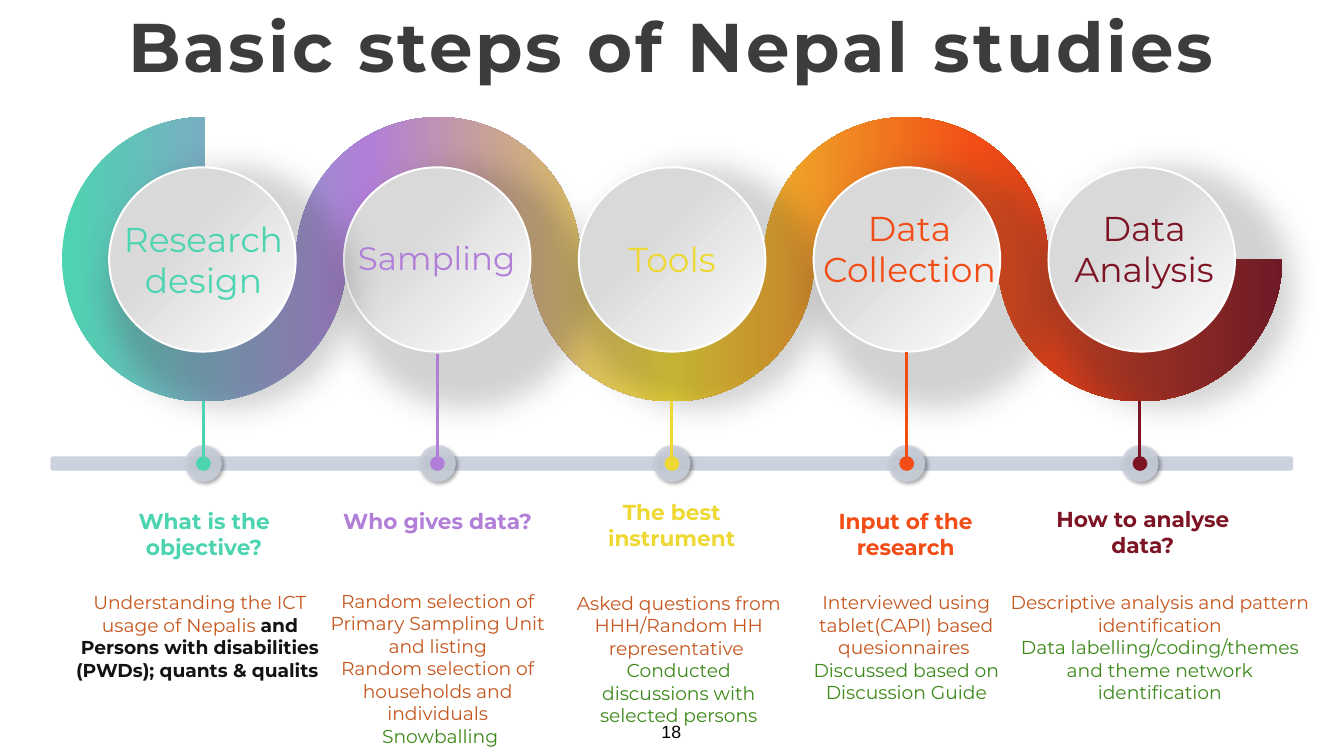
from itertools import pairwise

from lxml.etree import SubElement
from pptx import Presentation
from pptx.dml.color import RGBColor
from pptx.enum.shapes import MSO_CONNECTOR as Connector, MSO_SHAPE as Shape
from pptx.enum.text import MSO_ANCHOR as Anchor, MSO_AUTO_SIZE as AutoSize, PP_ALIGN as Align
from pptx.oxml.ns import qn
from pptx.util import Pt

COLORS = {
    "teal": "4CD4B0", "violet": "B17ED8", "yellow": "EDD834", "orange": "F24D16",
    "wine": "7D1424", "rust": "C5571F", "green": "3D891A", "ink": "141313",
    "title": "3C3C3C", "bar": "CBD1DD", "disc": "DAD9DA", "white": "FFFFFF",
    "disc_shadow": "383535", "black": "000000",
}
RIBBON_STOPS = [(0, "teal"), (25, "violet"), (50, "yellow"), (75, "orange"), (100, "wine")]
DISC_STOPS = [(36, "disc"), (100, "white")]
DISC_SHADOW = {"color": "disc_shadow", "alpha": 21, "blur": 30, "distance": 0, "scale": 130}
NODE_SHADOW = {"color": "black", "alpha": 40, "blur": 4, "distance": 3, "scale": 100}

RIBBON_X, RIBBON_Y = 207.4, 263.4
RIBBON_OUTER, RIBBON_INNER = 144.4, 93.2
RIBBON_PITCH = RIBBON_OUTER + RIBBON_INNER
RIBBON_BOTTOM = RIBBON_Y + RIBBON_OUTER
CURVE = 0.5523  # control point ratio of a quarter circle
NODE_Y, NODE_SIZE = 470.9, 37.5

# Each step: colour, stem, then (box, content) for label, question and details
STEPS = [
    {"color": "teal", "center": 206.6, "stem": RIBBON_BOTTOM, "label_size": 35,
     "label": ((89, 216, 235.4, 95), "Research design"),
     "question": ((72, 511.3, 270.7, 63), "What is the objective?"),
     "details": ((56.9, 595.5, 292.3, 102), [
         [("Understanding the ICT usage of Nepalis ", "rust", False),
          ("and Persons with disabilities", "ink", True)],
         [("(PWDs); quants & qualits ", "ink", True)]])},
    {"color": "violet", "center": 444.2, "stem": 359.3, "label_size": 33,
     "label": ((348.5, 236.9, 190, 50.4), "Sampling"),
     "question": ((334, 511.3, 221, 36.7), "Who gives data?"),
     "details": ((325.4, 594.2, 238.3, 171.4), [
         [("Random selection of Primary Sampling Unit and listing", "rust", False)],
         [("Random selection of households and individuals", "rust", False)],
         [(" ", "rust", False), ("Snowballing", "green", False)]])},
    {"color": "yellow", "center": 682.4, "stem": RIBBON_BOTTOM, "label_size": 35,
     "label": ((597.6, 236.9, 170, 52.6), "Tools"),
     "question": ((571.7, 501.8, 221, 63), "The best instrument"),
     "details": ((571.7, 596.2, 235.4, 148.3), [
         [("Asked questions from HHH/Random HH representative ", "rust", False)],
         [("Conducted discussions with selected persons", "green", False)]])},
    {"color": "orange", "center": 920.9, "stem": 357.1, "label_size": 35,
     "label": ((816.9, 205.2, 213.8, 95), "Data Collection"),
     "question": ((809.3, 511.3, 221, 63), "Input of the research"),
     "details": ((810, 595.5, 221, 125.3), [
         [("Interviewed using tablet(CAPI) based quesionnaires ", "rust", False)],
         [("Discussed based on Discussion Guide", "green", False)]])},
    {"color": "wine", "center": 1157.8, "stem": RIBBON_BOTTOM, "label_size": 35,
     "label": ((1070.3, 205.2, 183.6, 95), "Data Analysis"),
     "question": ((1039.7, 509.2, 242, 63), "How to analyse data?"),
     "details": ((1015.6, 595.5, 324.7, 125.3), [
         [("Descriptive analysis and pattern identification", "rust", False)],
         [("Data labelling/coding/themes and theme network identification", "green", False)]])},
]


def rgb(name):
    return RGBColor.from_string(COLORS[name])


def set_attributes(target, values):
    for name, value in values.items():
        setattr(target, name, value)


def add_color(parent, name, alpha=None):
    color = SubElement(parent, qn("a:srgbClr"), val=COLORS[name])
    if alpha:
        SubElement(color, qn("a:alpha"), val=str(alpha * 1000))


def fill_gradient(shape, stops, angle):
    shape.fill.gradient()
    shape.fill.gradient_angle = (360 - angle) % 360
    stop_list = shape._element.spPr.find(qn("a:gradFill")).find(qn("a:gsLst"))
    for stop in list(stop_list):
        stop_list.remove(stop)
    for position, name in stops:
        add_color(SubElement(stop_list, qn("a:gs"), pos=str(position * 1000)), name)


def add_shadow(shape, shadow):
    effects = shape._element.spPr.find(qn("a:effectLst"))
    scale = str(shadow["scale"] * 1000)
    outer = SubElement(effects, qn("a:outerShdw"), blurRad=str(Pt(shadow["blur"])),
                       dist=str(Pt(shadow["distance"])), dir="2700000",
                       sx=scale, sy=scale, algn="tl", rotWithShape="0")
    add_color(outer, shadow["color"], shadow["alpha"])


def add_plain_shape(shapes, kind, box):
    shape = shapes.add_shape(kind, *map(Pt, box))
    shape.shadow.inherit = False
    shape.line.fill.background()
    return shape


def write_text(frame, paragraphs, size, font="Montserrat", inset=(10, 5)):
    """Fill a frame with centred paragraphs of (text, colour, bold) runs."""
    horizontal, vertical = map(Pt, inset)
    set_attributes(frame, {
        "word_wrap": True, "vertical_anchor": Anchor.TOP,
        "margin_left": horizontal, "margin_right": horizontal,
        "margin_top": vertical, "margin_bottom": vertical})
    for index, runs in enumerate(paragraphs):
        paragraph = frame.paragraphs[0] if index == 0 else frame.add_paragraph()
        paragraph.alignment = Align.CENTER
        for text, color, bold in runs:
            run = paragraph.add_run()
            run.text = text
            set_attributes(run.font, {"name": font, "size": Pt(size), "bold": bold})
            run.font.color.rgb = rgb(color)


def add_text(shapes, box, paragraphs, size, **options):
    frame = shapes.add_textbox(*map(Pt, box)).text_frame
    write_text(frame, paragraphs, size, **options)


def add_title(slide, text):
    title = slide.shapes.title
    box = (0, 0, 1364.5, 92)
    set_attributes(title, dict(zip(("left", "top", "width", "height"), map(Pt, box))))
    frame = title.text_frame
    write_text(frame, [[(text, "title", True)]], 70, inset=(7.2, 3.6))
    frame.auto_size = AutoSize.NONE
    frame.paragraphs[0].runs[0].font._element.set("spc", "300")


def half_ring(index, radius):
    """Left, middle and right points: under even centres, over odd ones."""
    center = RIBBON_X + index * RIBBON_PITCH
    middle = RIBBON_Y - radius if index % 2 else RIBBON_Y + radius
    points = [(center - radius, RIBBON_Y), (center, middle), (center + radius, RIBBON_Y)]
    return points if index else [(center, RIBBON_Y - radius)] + points


def round_corners(ribbon, points):
    """Turn each slanted line between quarter points into a quarter circle."""
    left, top = (min(values) for values in zip(*points))
    segments = ribbon._element.iter(qn("a:lnTo"))
    for segment, ((x1, y1), (x2, y2)) in zip(list(segments), pairwise(points)):
        if x1 == x2 or y1 == y2:
            continue
        across, down = CURVE * (x2 - x1), CURVE * (y2 - y1)
        if y1 == Pt(RIBBON_Y):
            controls = [(x1, y1 + down), (x2 - across, y2)]
        else:
            controls = [(x1 + across, y1), (x2, y2 - down)]
        curve = SubElement(segment.getparent(), qn("a:cubicBezTo"))
        for x, y in controls + [(x2, y2)]:
            SubElement(curve, qn("a:pt"), x=str(round(x - left)), y=str(round(y - top)))
        segment.getparent().replace(segment, curve)


def add_ribbon(shapes):
    """Go out along one edge of the wave and back along the other."""
    forward, backward = [], []
    for index in range(len(STEPS)):
        radii = (RIBBON_INNER, RIBBON_OUTER)
        near, far = reversed(radii) if index % 2 else radii
        forward += half_ring(index, near)
        backward += half_ring(index, far)
    corners = [(Pt(round(x, 2)), Pt(round(y, 2))) for x, y in forward + backward[::-1]]
    points = list(dict.fromkeys(corners))
    builder = shapes.build_freeform(*points[0])
    builder.add_line_segments(points[1:], close=True)
    ribbon = builder.convert_to_shape()
    round_corners(ribbon, points)
    ribbon.shadow.inherit = False
    ribbon.line.fill.background()
    fill_gradient(ribbon, RIBBON_STOPS, 0)


def add_disc(shapes, index):
    disc = add_plain_shape(shapes, Shape.OVAL, (110.9 + index * 238.5, 170, 189.4, 187.2))
    fill_gradient(disc, DISC_STOPS, 45)
    disc.line.color.rgb = rgb("white")
    disc.line.width = Pt(2)
    add_shadow(disc, DISC_SHADOW)


def add_node(shapes, center):
    corner = NODE_SIZE / 2
    box = (center - corner, NODE_Y - corner, NODE_SIZE, NODE_SIZE)
    node = add_plain_shape(shapes, Shape.OVAL, box)
    node.fill.solid()
    node.fill.fore_color.rgb = rgb("bar")
    color = node._element.spPr.find(qn("a:solidFill"))[0]
    SubElement(color, qn("a:alpha"), val="85000")
    add_shadow(node, NODE_SHADOW)


def add_stem(shapes, center, top, color):
    stem = shapes.add_connector(Connector.STRAIGHT, *map(Pt, (center, top, center, NODE_Y)))
    stem.line.color.rgb = rgb(color)
    stem.line.width = Pt(3)
    SubElement(stem.line._get_or_add_ln(), qn("a:tailEnd"), type="oval", w="lg", len="lg")
    SubElement(stem._element.spPr, qn("a:effectLst"))


def add_step(slide, step):
    shapes = slide.shapes.add_group_shape().shapes
    color = step["color"]
    add_node(shapes, step["center"])
    add_stem(shapes, step["center"], step["stem"], color)
    for part, size, bold in (("label", step["label_size"], False), ("question", 22, True)):
        box, text = step[part]
        add_text(shapes, box, [[(text, color, bold)]], size)
    add_text(shapes, *step["details"], 19)


def main():
    presentation = Presentation()
    set_attributes(presentation, {"slide_width": Pt(1365), "slide_height": Pt(768)})
    slide = presentation.slides.add_slide(presentation.slide_layouts[5])
    add_title(slide, "Basic steps of Nepal studies")

    # Ribbon, timeline bar and discs
    add_ribbon(slide.shapes)
    bar = add_plain_shape(slide.shapes, Shape.ROUNDED_RECTANGLE, (51.3, 463.7, 1262, 14.4))
    bar.fill.solid()
    bar.fill.fore_color.rgb = rgb("bar")
    for index in (1, 2, 3, 4, 0):
        add_disc(slide.shapes, index)

    # Steps and slide number
    for step in STEPS:
        add_step(slide, step)
    add_text(slide.shapes, (666.7, 728.6, 30.2, 30.2), [[("18", "black", False)]], 18,
             font="Arial", inset=(4, 4))
    presentation.save("out.pptx")


if __name__ == "__main__":
    main()
